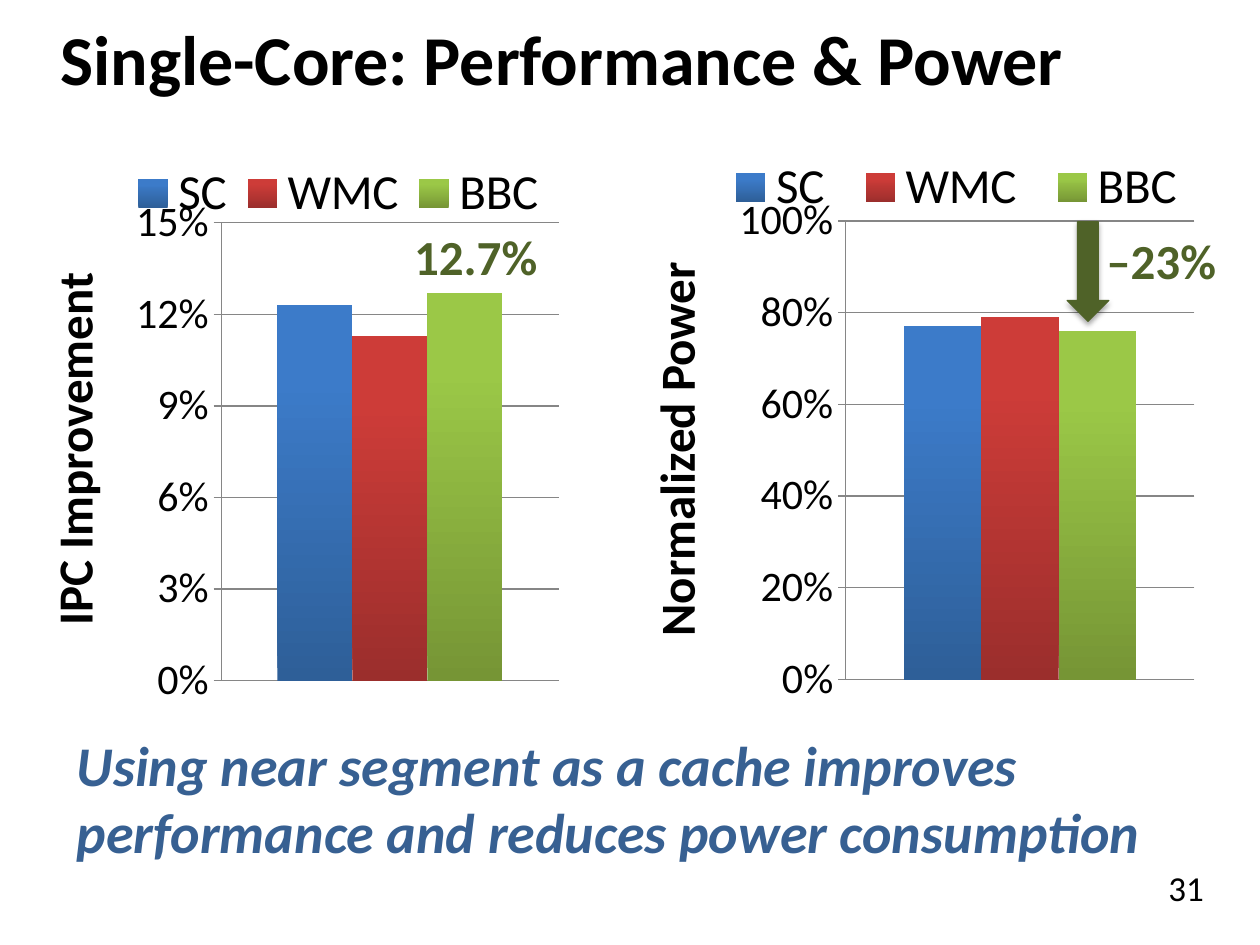
from dataclasses import dataclass

from lxml import etree
from pptx import Presentation
from pptx import util as u
from pptx.chart import data
from pptx.dml.color import RGBColor
from pptx.enum import chart as kinds, shapes, text
from pptx.oxml import ns


@dataclass(frozen=True)
class Theme:
    """Font, colours and type sizes of the slide."""
    font: str = "Calibri"
    ink: str = "000000"
    accent: str = "4F6228"
    message: str = "376092"
    grid: str = "868686"
    bars: tuple = (("2E5F98", "3C7BC9"), ("9B2E2C", "CD3C38"), ("769535", "9BC847"))
    title_size: int = 40
    message_size: int = 32
    label_size: int = 28
    tick_size: int = 24
    number_size: int = 20


@dataclass(frozen=True)
class Box:
    """A rectangle in cells of a grid of 100 columns and 75 rows."""
    left: float
    top: float
    width: float
    height: float

    def inner(self, left, top, width, height):
        """Return a box measured from this box's corner."""
        return Box(self.left + left, self.top + top, width, height)

    def emu(self):
        """Return the four lengths for python-pptx."""
        return [u.Inches(cells / 10) for cells in (self.left, self.top, self.width, self.height)]


@dataclass(frozen=True)
class Panel:
    """Content of one chart panel."""
    label: str
    values: tuple
    top_value: float
    step: float
    plot: tuple
    legend: tuple
    callout: str
    callout_box: tuple


THEME = Theme()
SERIES = ("SC", "WMC", "BBC")


def style(font, size, color=THEME.ink, bold=False, italic=False):
    """Apply the theme font with the given look."""
    font.name, font.size, font.bold, font.italic = THEME.font, u.Pt(size), bold, italic
    font.color.rgb = RGBColor.from_string(color)


def add_text(page, box, words, size, align=text.PP_ALIGN.CENTER,
             anchor=text.MSO_ANCHOR.TOP, **look):
    """Add a wrapped text box with one styled run."""
    shape = page.shapes.add_textbox(*box.emu())
    frame = shape.text_frame
    frame.word_wrap, frame.vertical_anchor = True, anchor
    para = frame.paragraphs[0]
    para.alignment = align
    span = para.add_run()
    span.text = words
    style(span.font, size, **look)
    return shape


def set_layout(parent, index, shares, inner=False):
    """Fix the place of a chart part as shares of the chart."""
    for old in parent.findall(ns.qn("c:layout")):
        parent.remove(old)
    layout = etree.Element(ns.qn("c:layout"))
    manual = etree.SubElement(layout, ns.qn("c:manualLayout"))
    settings = [("layoutTarget", "inner")] if inner else []
    settings += [("xMode", "edge"), ("yMode", "edge"), *zip("xywh", shares)]
    for name, value in settings:
        etree.SubElement(manual, ns.qn(f"c:{name}")).set("val", str(value))
    parent.insert(index, layout)


def format_axis(axis, panel):
    """Set the percent scale, ticks and gridlines."""
    axis.minimum_scale, axis.maximum_scale = 0, panel.top_value
    axis.major_unit = panel.step
    axis.major_tick_mark = kinds.XL_TICK_MARK.OUTSIDE
    axis.has_major_gridlines = True
    for line in (axis.format.line, axis.major_gridlines.format.line):
        line.color.rgb = RGBColor.from_string(THEME.grid)
        line.width = u.Pt(0.75)
    axis.tick_labels.number_format = "0%"
    axis.tick_labels.number_format_is_linked = False
    style(axis.tick_labels.font, THEME.tick_size)


def add_panel(page, box, panel):
    """Add a column chart with its axis title and callout."""
    source = data.CategoryChartData(number_format="0%")
    source.categories = ["1"]
    for name, value in zip(SERIES, panel.values):
        source.add_series(name, [value])
    chart = page.shapes.add_chart(kinds.XL_CHART_TYPE.COLUMN_CLUSTERED, *box.emu(), source).chart
    style(chart.font, 10)
    chart.has_title = False
    chart.category_axis.visible = False
    format_axis(chart.value_axis, panel)
    chart.has_legend = True
    chart.legend.position = kinds.XL_LEGEND_POSITION.TOP
    chart.legend.include_in_layout = False
    style(chart.legend.font, THEME.label_size)
    plot = chart.plots[0]
    plot.gap_width, plot.overlap, plot.vary_by_categories = 150, 0, False
    for series, colors in zip(plot.series, THEME.bars):
        fill = series.format.fill
        fill.gradient()
        fill.gradient_angle = 90
        for stop, color, position in zip(fill.gradient_stops, colors, (0, 0.8)):
            stop.color.rgb = RGBColor.from_string(color)
            stop.position = position
    root = chart.element
    set_layout(root.find(".//" + ns.qn("c:plotArea")), 0, panel.plot, inner=True)
    set_layout(root.find(".//" + ns.qn("c:legend")), 1, panel.legend)
    label = add_text(page, box.inner(-23.9, 22.3, 43.8, 6.7), panel.label, THEME.label_size,
                     anchor=text.MSO_ANCHOR.MIDDLE, bold=True)
    label.rotation = 270
    add_text(page, box.inner(*panel.callout_box), panel.callout, THEME.label_size,
             color=THEME.accent, bold=True)


def add_drop_arrow(page, box):
    """Add the shadowed arrow that marks the saving."""
    arrow = page.shapes.add_shape(shapes.MSO_SHAPE.DOWN_ARROW, *box.emu())
    color = RGBColor.from_string(THEME.accent)
    arrow.fill.solid()
    arrow.fill.fore_color.rgb = color
    arrow.line.color.rgb = color
    arrow.line.width = u.Pt(0.75)
    arrow.shadow.inherit = False
    effects = arrow.element.spPr.find(ns.qn("a:effectLst"))
    shadow = etree.SubElement(effects, ns.qn("a:outerShdw"), blurRad=str(u.Pt(3.1)),
                              dist=str(u.Pt(1.8)), dir="5400000", rotWithShape="0")
    black = etree.SubElement(shadow, ns.qn("a:srgbClr"), val="000000")
    etree.SubElement(black, ns.qn("a:alpha"), val="35000")


def add_title(page, box, words):
    """Place and fill the title placeholder."""
    title = page.shapes.title
    title.left, title.top, title.width, title.height = box.emu()
    frame = title.text_frame
    frame.margin_left = u.Inches(0.48)
    frame.vertical_anchor = text.MSO_ANCHOR.MIDDLE
    para = frame.paragraphs[0]
    para.alignment = text.PP_ALIGN.LEFT
    span = para.add_run()
    span.text = words
    style(span.font, THEME.title_size, bold=True)


def main():
    """Build the slide and save the deck."""
    deck = Presentation()
    deck.slide_width, deck.slide_height = u.Inches(10), u.Inches(7.5)
    page = deck.slides.add_slide(deck.slide_layouts.get_by_name("Title Only"))
    add_title(page, Box(0, 0, 100, 9.2), "Single-Core: Performance & Power")
    performance = Panel("IPC Improvement", (0.123, 0.113, 0.127), 0.15, 0.03,
                        (0.256, 0.165, 0.703, 0.782), (0.04, 0.05, 0.92, 0.13),
                        "12.7%", (18.9, 7.5, 22.1, 6.8))
    power = Panel("Normalized Power", (0.77, 0.79, 0.76), 1, 0.2,
                  (0.281, 0.162, 0.675, 0.781), (0.02, 0.04, 0.95, 0.13),
                  "–23%", (26.3, 7.8, 20.5, 7.1))
    power_box = Box(55.6, 10, 41, 46.6)
    add_panel(page, Box(7.8, 10, 38.1, 46.5), performance)
    add_panel(page, power_box, power)
    add_drop_arrow(page, power_box.inner(29.1, 7.6, 3.3, 7.9))
    add_text(page, Box(5.1, 57.5, 94.1, 11.8),
             "Using near segment as a cache improves performance and reduces power consumption",
             THEME.message_size, align=text.PP_ALIGN.LEFT, color=THEME.message,
             bold=True, italic=True)
    add_text(page, Box(88.3, 68.3, 11.7, 6.7), "31", THEME.number_size)
    deck.save("out.pptx")


if __name__ == "__main__":
    main()
